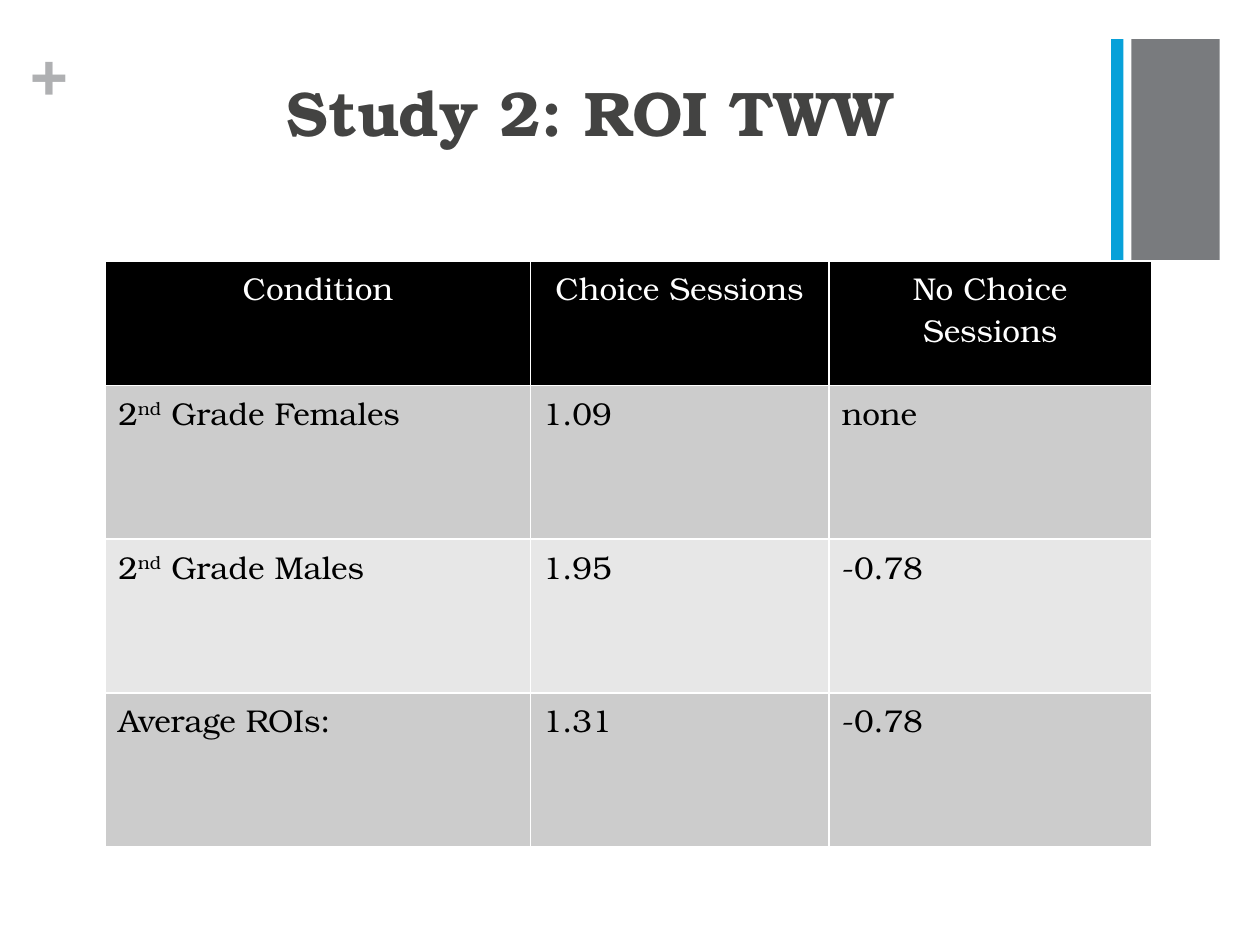
from pptx import Presentation
from pptx.dml.color import RGBColor as Rgb
from pptx.enum.shapes import MSO_SHAPE as Shape
from pptx.enum.text import MSO_ANCHOR as Anchor, PP_ALIGN as Align
from pptx.util import Cm, Pt

HUES = {
    "white": "FFFFFF", "black": "000000", "grey": "797B7E", "blue": "08A1D9",
    "plus": "AFB0B2", "title": "434342", "odd": "CCCCCC", "even": "E7E7E7",
}


def hue(name):
    return Rgb.from_string(HUES[name])


class Deck:
    """Holds the style and the current slide."""
    face = "TeX Gyre Bonum"

    def __init__(self, wide, high):
        self.prs = Presentation()
        self.prs.slide_width, self.prs.slide_height = Cm(wide), Cm(high)
        self.slide = self.prs.slides.add_slide(self.prs.slide_layouts[6])

    def fill_in(self, para, parts, size, color, bold=False, align=Align.LEFT):
        """Add runs to a paragraph; every second part is superscript."""
        para.alignment = align
        style = {"name": self.face, "size": Pt(size), "bold": bold}
        for i, part in enumerate(parts):
            run = para.add_run()
            run.text = part
            for key, val in style.items():
                setattr(run.font, key, val)
            run.font.color.rgb = hue(color)
            if i % 2:
                run.font._element.set("baseline", "30000")

    def bar(self, box, color):
        rect = self.slide.shapes.add_shape(Shape.RECTANGLE, *map(Cm, box))
        rect.shadow.inherit = False
        rect.fill.solid()
        rect.fill.fore_color.rgb = hue(color)
        rect.line.fill.background()

    def text(self, box, words, color, pad=(0, 0), align=Align.LEFT):
        frame = self.slide.shapes.add_textbox(*map(Cm, box)).text_frame
        side, end = map(Cm, pad)
        form = {
            "word_wrap": True, "vertical_anchor": Anchor.TOP,
            "margin_left": side, "margin_right": side,
            "margin_top": end, "margin_bottom": end,
        }
        for key, val in form.items():
            setattr(frame, key, val)
        self.fill_in(frame.paragraphs[0], [words], 36, color, True, align)

    def table(self, left, top, cols, rows, data):
        # The default table style supplies the white cell borders
        box = map(Cm, (left, top, sum(cols), sum(rows)))
        grid = self.slide.shapes.add_table(len(rows), len(cols), *box).table
        for col, wide in zip(grid.columns, cols):
            col.width = Cm(wide)
        for r, (high, line) in enumerate(zip(rows, data)):
            grid.rows[r].height = Cm(high)
            head = r == 0
            fill = "black" if head else "odd" if r % 2 else "even"
            for c, parts in enumerate(line):
                cell = grid.cell(r, c)
                cell.fill.solid()
                cell.fill.fore_color.rgb = hue(fill)
                self.fill_in(cell.text_frame.paragraphs[0], parts, 18,
                             "white" if head else "black",
                             align=Align.CENTER if head else Align.LEFT)


def main():
    deck = Deck(25.4, 19.05)

    # Corner marks
    deck.bar((22.81, 0.79, 1.78, 4.45), "grey")
    deck.text((0.61, 0.64, 0.74, 1.55), "+", "plus")
    deck.bar((22.4, 0.79, 0.25, 4.45), "blue")

    # Title
    deck.text((1.4, 1.35, 20.98, 3.1), "Study 2: ROI TWW", "title",
              (0.25, 0.13), Align.CENTER)

    # Results
    deck.table(2.13, 5.26, [8.56, 6.02, 6.5], [2.51] + [3.1] * 3, [
        [["Condition"], ["Choice Sessions"], ["No Choice Sessions"]],
        [["2", "nd", " Grade Females"], ["1.09"], ["none"]],
        [["2", "nd", " Grade Males"], ["1.95"], ["-0.78"]],
        [["Average ROIs:"], ["1.31"], ["-0.78"]],
    ])

    deck.prs.save("out.pptx")


if __name__ == "__main__":
    main()
